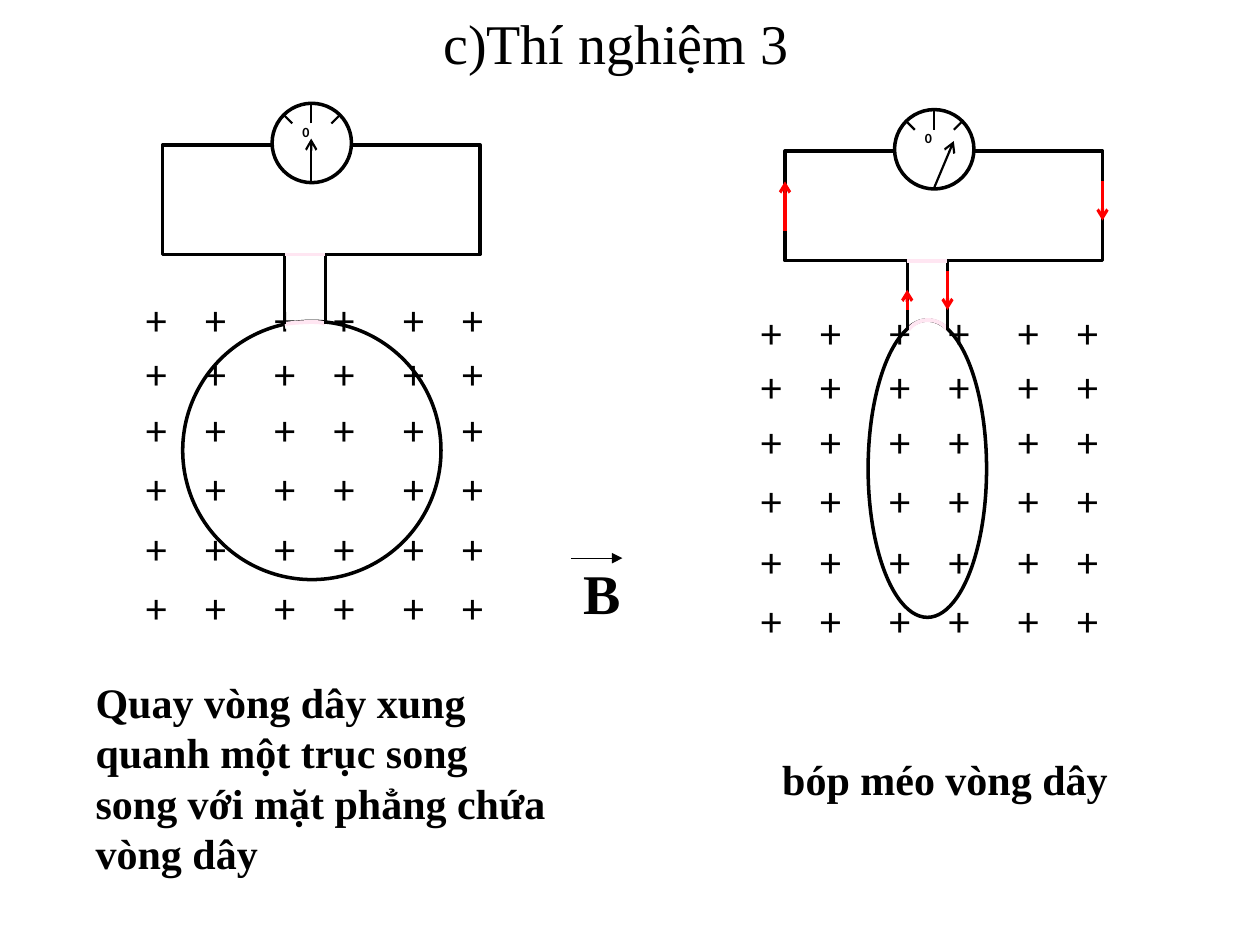
from lxml import etree
from pptx import Presentation
from pptx.dml.color import RGBColor
from pptx.enum.shapes import MSO_CONNECTOR, MSO_SHAPE
from pptx.enum.text import MSO_AUTO_SIZE
from pptx.oxml.ns import qn
from pptx.util import Inches, Pt

ARC, OVAL, RECT = MSO_SHAPE.ARC, MSO_SHAPE.OVAL, MSO_SHAPE.RECTANGLE
STRAIGHT = MSO_CONNECTOR.STRAIGHT
FIT = MSO_AUTO_SIZE.SHAPE_TO_FIT_TEXT
SERIF, SANS = "Times New Roman", "Calibri"
BLACK, WHITE, RED, PINK = "000000", "FFFFFF", "FF0000", "FFE6F2"


def color(code):
    return RGBColor.from_string(code)


def add_text(slide, text, box, size, font=SERIF, bold=False, inset=0.1):
    shape = slide.shapes.add_textbox(*map(Inches, box))
    frame = shape.text_frame
    frame.text = text
    frame.word_wrap = True
    frame.auto_size = FIT
    frame.margin_left = frame.margin_right = Inches(inset)
    style = frame.paragraphs[0].runs[0].font
    style.name, style.size, style.bold = font, Pt(size), bold
    style.color.rgb = color(BLACK)


def add_shape(slide, kind, box, line=BLACK, width=2, fill=None, turn=0):
    shape = slide.shapes.add_shape(kind, *map(Inches, box))
    shape.shadow.inherit = False
    shape.rotation = turn
    shape.line.color.rgb = color(line)
    shape.line.width = Pt(width)
    if fill:
        shape.fill.solid()
        shape.fill.fore_color.rgb = color(fill)
    else:
        shape.fill.background()
    return shape


def add_line(slide, start, end, width=1.25, code=BLACK, head=None):
    wire = slide.shapes.add_connector(STRAIGHT, *map(Inches, start + end))
    wire.line.color.rgb = color(code)
    wire.line.width = Pt(width)
    if head:
        etree.SubElement(wire.line._ln, qn("a:tailEnd"), type=head)
    etree.SubElement(wire._element.spPr, qn("a:effectLst"))


def add_field(slide, left, top):
    """Magnetic field pointing into the page: three pairs of columns."""
    cols = [left + 1.02 * pair + 0.47 * side
            for pair in range(3) for side in range(2)]
    rows = [top + step for step in (0, 0.43, 0.87, 1.34, 1.82, 2.29)]
    for x in cols:
        for y in rows:
            add_text(slide, "+", (x, y, 0.39, 0.5), 24, SANS)


def add_meter(slide, left, top, tip):
    """Wire frame with its meter and the two leads to the loop."""
    add_shape(slide, RECT, (left, top, 2.52, 0.87))
    add_shape(slide, OVAL, (left + 0.87, top - 0.33, 0.63, 0.63), fill=WHITE)

    # Needle, scale marks and zero
    mid = left + 1.18
    add_line(slide, (mid, top + 0.3), (mid + tip[0], top + tip[1]),
             head="arrow")
    for near, far, rim in ((-0.15, -0.22, -0.24), (0.16, 0.23, -0.24),
                           (0, 0, -0.33)):
        add_line(slide, (mid + near, top - 0.17), (mid + far, top + rim))
    add_text(slide, "0", (left + 1.11, top - 0.22, 0.08, 0.24), 8, SANS,
             True, 0)

    # Leads, and the gap between them
    base = top + 0.87
    for x in (left + 0.97, left + 1.29):
        add_line(slide, (x, base), (x, base + 0.55), 1.75)
    add_line(slide, (left + 0.97, base), (left + 1.29, base), 2, PINK)


def main():
    deck = Presentation()
    deck.slide_width, deck.slide_height = Inches(10), Inches(7.5)
    slide = deck.slides.add_slide(deck.slide_layouts[6])

    # Title and field vector
    add_text(slide, "c)Thí nghiệm 3", (3.42, 0.02, 3.65, 0.64), 32)
    add_text(slide, "B", (4.53, 4.38, 9.08, 0.64), 32, bold=True)
    add_line(slide, (4.53, 4.43), (4.94, 4.43), 0.75, head="triangle")

    # Left: turned round loop, no current
    add_field(slide, 1.06, 2.28)
    add_shape(slide, OVAL, (1.45, 2.55, 2.05, 2.05))
    add_shape(slide, ARC, (1.95, 2.57, 0.63, 0.08), PINK, 2.25, WHITE, 353.2)
    add_meter(slide, 1.29, 1.15, (0, -0.05))
    add_text(slide, "Quay vòng dây xung quanh một trục song song với "
             "mặt phẳng chứa vòng dây", (0.66, 5.32, 3.78, 1.66), 24,
             bold=True)

    # Right: squeezed loop
    add_shape(slide, OVAL, (6.89, 2.54, 0.94, 2.36))
    add_field(slide, 5.94, 2.38)
    gap = add_shape(slide, ARC, (7.17, 2.54, 0.39, 0.39), PINK, 2.25,
                    turn=307.1)
    gap.adjustments[0], gap.adjustments[1] = 162, 8.94
    add_meter(slide, 6.23, 1.2, (0.16, -0.08))

    # Current direction
    for x, start, end in ((8.75, 1.44, 1.75), (7.52, 2.15, 2.46),
                          (6.23, 1.83, 1.44), (7.2, 2.46, 2.3)):
        add_line(slide, (x, start), (x, end), 1.75, RED, "arrow")
    add_text(slide, "bóp méo vòng dây", (6.11, 5.93, 2.92, 0.5), 24,
             bold=True)

    deck.save("out.pptx")


if __name__ == "__main__":
    main()
